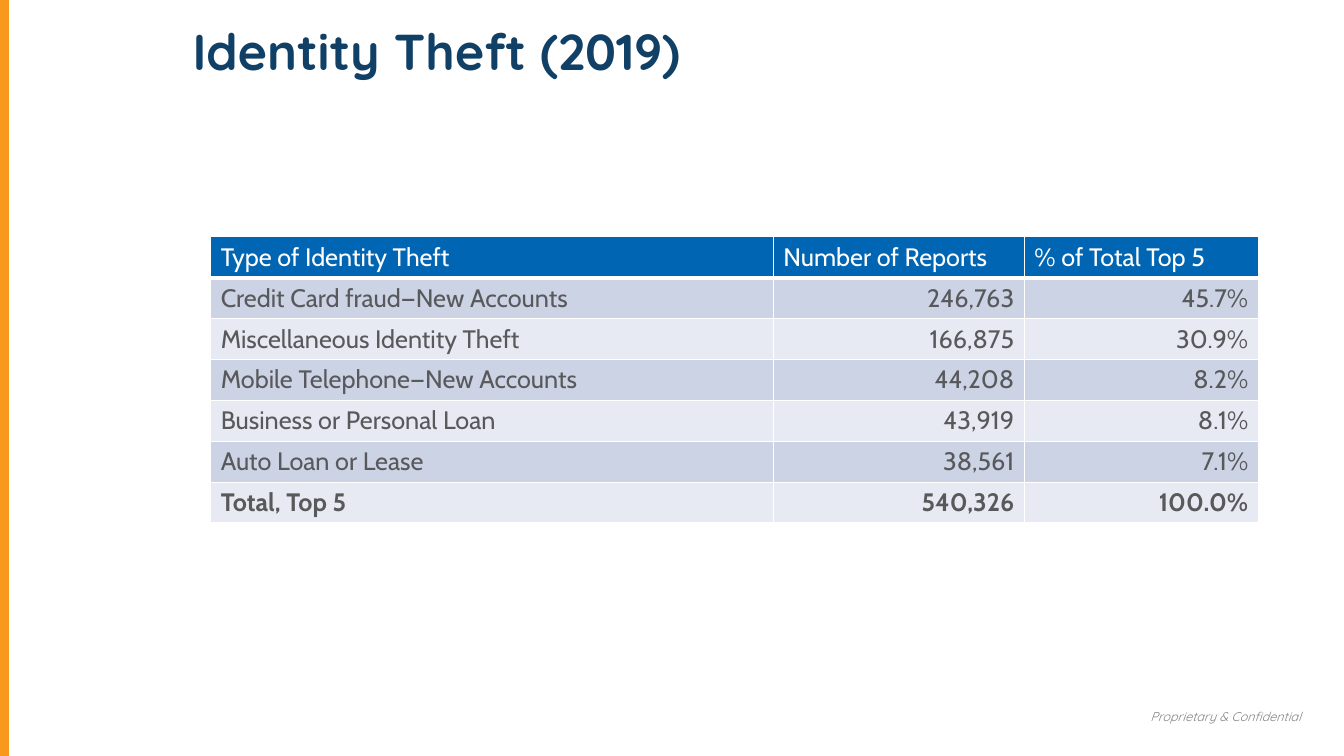
from dataclasses import dataclass

from lxml import etree
from pptx import Presentation
from pptx import util as u
from pptx.dml.color import RGBColor
from pptx.enum import shapes, text
from pptx.oxml.ns import qn

EMU_PER_PX = 9144


@dataclass(frozen=True)
class Theme:
    heading_font: str = "Quicksand"
    body_font: str = "Cabin"
    navy: str = "114066"
    blue: str = "0066B3"
    orange: str = "F8991D"
    grey: str = "58595B"
    pale_grey: str = "808285"
    white: str = "FFFFFF"
    bands: tuple = ("CCD3E5", "E7EAF2")
    title_size: int = 36
    table_size: int = 18
    footer_size: int = 9


THEME = Theme()
REPORTS = [
    ("Type of Identity Theft", "Number of Reports", "% of Total Top 5"),
    ("Credit Card fraud—New Accounts", "246,763", "45.7%"),
    ("Miscellaneous Identity Theft", "166,875", "30.9%"),
    ("Mobile Telephone—New Accounts", "44,208", "8.2%"),
    ("Business or Personal Loan", "43,919", "8.1%"),
    ("Auto Loan or Lease", "38,561", "7.1%"),
    ("Total, Top 5", "540,326", "100.0%"),
]


def px(*lengths):
    return [u.Emu(length * EMU_PER_PX) for length in lengths]


def apply(target, values):
    for name, value in values.items():
        setattr(target, name, value)


def write(frame, wording, font, size, color, align=text.PP_ALIGN.LEFT, **styles):
    paragraph = frame.paragraphs[0]
    paragraph.alignment = align
    run = paragraph.add_run()
    run.text = wording
    apply(run.font, {"name": font, "size": u.Pt(size), **styles})
    run.font.color.rgb = RGBColor.from_string(color)


def add_accent(slide, box):
    left, top, width, height = box
    x, y, bottom = px(left + width // 2, top, top + height)
    accent = slide.shapes.add_connector(shapes.MSO_CONNECTOR.STRAIGHT, x, y, x, bottom)
    accent.line.width = u.Pt(8)
    accent.line.color.rgb = RGBColor.from_string(THEME.orange)
    etree.SubElement(accent._element.spPr, qn("a:effectLst"))


def add_footer(slide, box):
    footer = slide.shapes.add_textbox(*px(*box)).text_frame
    apply(footer, {
        "word_wrap": True,
        "vertical_anchor": text.MSO_ANCHOR.BOTTOM,
        "margin_bottom": px(21)[0],
    })
    write(footer, "Proprietary & Confidential", THEME.heading_font,
          THEME.footer_size, THEME.pale_grey, text.PP_ALIGN.RIGHT, italic=True)


def add_title(slide, box):
    title = slide.shapes.title
    apply(title, dict(zip(("left", "top", "width", "height"), px(*box))))
    apply(title.text_frame, {
        "word_wrap": True,
        "auto_size": text.MSO_AUTO_SIZE.NONE,
        "vertical_anchor": text.MSO_ANCHOR.TOP,
    })
    write(title.text_frame, "Identity Theft (2019)", THEME.heading_font,
          THEME.title_size, THEME.navy, bold=True)


def set_borders(cell, bottom_points):
    properties = cell._tc.get_or_add_tcPr()
    for side, points in (("L", 1), ("R", 1), ("T", 1), ("B", bottom_points)):
        border = etree.SubElement(properties, qn(f"a:ln{side}"), w=str(u.Pt(points)))
        fill = etree.SubElement(border, qn("a:solidFill"))
        etree.SubElement(fill, qn("a:srgbClr"), val=THEME.white)


def add_reports(slide, box, column_widths):
    table = slide.shapes.add_table(len(REPORTS), len(column_widths), *px(*box)).table
    for column, width in zip(table.columns, px(*column_widths)):
        column.width = width
    for r, report in enumerate(REPORTS):
        header = r == 0
        total = r == len(REPORTS) - 1
        band = THEME.blue if header else THEME.bands[(r - 1) % 2]
        for c, wording in enumerate(report):
            cell = table.cell(r, c)
            set_borders(cell, 3 if header else 1)
            cell.fill.solid()
            cell.fill.fore_color.rgb = RGBColor.from_string(band)
            number = c > 0 and not header
            write(cell.text_frame, wording, THEME.body_font, THEME.table_size,
                  THEME.white if header else THEME.grey,
                  text.PP_ALIGN.RIGHT if number else text.PP_ALIGN.LEFT, bold=total)


def main():
    deck = Presentation()
    deck.slide_width, deck.slide_height = px(1333, 750)
    slide = deck.slides.add_slide(deck.slide_layouts[5])
    add_footer(slide, (1097, 691, 203, 48))
    add_accent(slide, (0, 0, 6, 750))
    add_title(slide, (181, 15, 1119, 100))
    add_reports(slide, (209, 235, 1039, 284), (558, 249, 232))
    deck.save("out.pptx")


if __name__ == "__main__":
    main()
